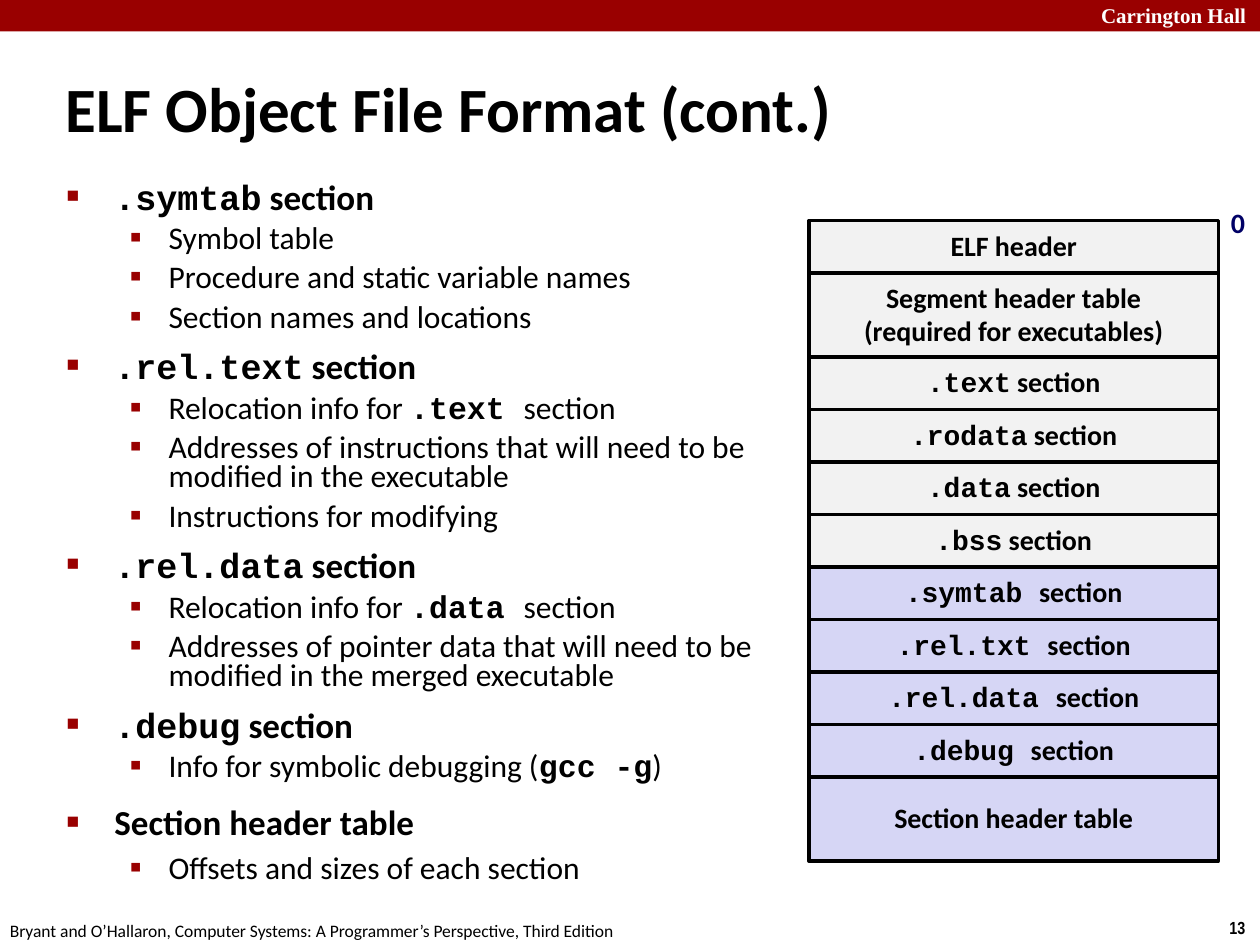
from lxml import etree
from pptx import Presentation
from pptx.dml.color import RGBColor
from pptx.enum.shapes import MSO_SHAPE as Shape
from pptx.enum.text import MSO_ANCHOR as Anchor, MSO_AUTO_SIZE as AutoSize, PP_ALIGN as Align
from pptx.oxml.ns import qn
from pptx.util import Inches, Pt

COLORS = {"red": "990000", "white": "FFFFFF", "black": "000000", "navy": "000066",
          "gray": "F2F2F2", "lavender": "D6D6F5"}
CODE_FONT = "Courier New"


def add_runs(paragraph, text, size, font="Calibri", color="black", bold=False):
    for index, part in enumerate(text.split("`")):
        if not part:
            continue
        is_code = index % 2 == 1
        run = paragraph.add_run()
        run.text = part
        values = {"size": Pt(size), "name": CODE_FONT if is_code else font,
                  "bold": bold or is_code}
        for name, value in values.items():
            setattr(run.font, name, value)
        run.font.color.rgb = RGBColor.from_string(COLORS[color])


def set_bullet(paragraph, character, percent, margin, indent):
    properties = paragraph._p.get_or_add_pPr()
    properties.set("marL", str(Inches(margin)))
    properties.set("indent", str(Inches(indent)))
    bullet_color = etree.SubElement(properties, qn("a:buClr"))
    etree.SubElement(bullet_color, qn("a:srgbClr"), val=COLORS["red"])
    etree.SubElement(properties, qn("a:buSzPct"), val=str(percent * 1000))
    etree.SubElement(properties, qn("a:buFont"), typeface="Arial")
    etree.SubElement(properties, qn("a:buChar"), char=character)


presentation = Presentation()
presentation.slide_width = Inches(10)
presentation.slide_height = Inches(7.5)
slide = presentation.slides.add_slide(presentation.slide_layouts[5])

banner = slide.shapes.add_shape(Shape.RECTANGLE, 0, 0, Inches(10), Inches(0.25))
banner.shadow.inherit = False
banner.fill.solid()
banner.fill.fore_color.rgb = RGBColor.from_string(COLORS["red"])
banner.line.fill.background()

title = slide.shapes.title
title_box = {"left": 0.42, "top": 0.42, "width": 9.53, "height": 0.86}
for name, value in title_box.items():
    setattr(title, name, Inches(value))
title.text_frame.vertical_anchor = Anchor.MIDDLE
title.text_frame.auto_size = AutoSize.NONE
title.text_frame.paragraphs[0].alignment = Align.LEFT
add_runs(title.text_frame.paragraphs[0], "ELF Object File Format (cont.)", 36, bold=True)

labels = [
    ("Carrington Hall", (8.64, -0.03, 1.43, 0.3),
     {"size": 12, "font": "Times New Roman", "color": "white", "bold": True}),
    ("13", (9.66, 7.23, 0.34, 0.27), {"size": 10, "font": "Arial Narrow", "bold": True}),
    ("Bryant and O’Hallaron, Computer Systems: A Programmer’s Perspective, Third Edition",
     (-0.02, 7.25, 5.08, 0.27), {"size": 10}),
    ("0", (9.67, 1.58, 0.31, 0.37), {"size": 16, "color": "navy", "bold": True}),
]
for text, box, style in labels:
    label = slide.shapes.add_textbox(*map(Inches, box))
    label.text_frame.word_wrap = False
    add_runs(label.text_frame.paragraphs[0], text, **style)

outline = [
    ("`.symtab` section", 0.71, 0.78,
     ["Symbol table", "Procedure and static variable names", "Section names and locations"]),
    ("`.rel.text` section", 0.71, 0.78,
     ["Relocation info for `.text `section",
      "Addresses of instructions that will need to be modified in the executable",
      "Instructions for modifying"]),
    ("`.rel.data` section", 0.71, 0.78,
     ["Relocation info for `.data `section",
      "Addresses of pointer data that will need to be modified in the merged executable"]),
    ("`.debug` section", 0.71, 0.78, ["Info for symbolic debugging (`gcc -g`)"]),
    ("Section header table", 0.88, 0.88, ["Offsets and sizes of each section"]),
]
body = slide.shapes.add_textbox(Inches(0.43), Inches(1.43), Inches(5.77), Inches(5.98))
body.text_frame.word_wrap = True
paragraph = body.text_frame.paragraphs[0]
for heading, heading_spacing, item_spacing, items in outline:
    if paragraph.runs:
        paragraph = body.text_frame.add_paragraph()
    paragraph.line_spacing = heading_spacing
    paragraph.space_before = Pt(12.5)
    set_bullet(paragraph, "■", 60, 0.38, -0.38)
    add_runs(paragraph, heading, 20, bold=True)
    for item in items:
        paragraph = body.text_frame.add_paragraph()
        paragraph.level = 1
        paragraph.line_spacing = item_spacing
        paragraph.space_before = Pt(5.6)
        set_bullet(paragraph, "▪", 110, 0.81, -0.31)
        add_runs(paragraph, item, 18)

single, double = Inches(5 / 12), Inches(8 / 12)
sections = [
    (["ELF header"], single, "gray"),
    (["Segment header table", "(required for executables)"], double, "gray"),
    (["`.text` section"], single, "gray"),
    (["`.rodata` section"], single, "gray"),
    (["`.data` section"], single, "gray"),
    (["`.bss` section"], single, "gray"),
    (["`.symtab `section"], single, "lavender"),
    (["`.rel.txt `section"], single, "lavender"),
    (["`.rel.data `section"], single, "lavender"),
    (["`.debug `section"], single, "lavender"),
    (["Section header table"], double, "lavender"),
]
top = Inches(1.75)
for lines, height, color in sections:
    section = slide.shapes.add_shape(Shape.RECTANGLE, Inches(6.42), top, Inches(3.25), height)
    section.shadow.inherit = False
    section.fill.solid()
    section.fill.fore_color.rgb = RGBColor.from_string(COLORS[color])
    section.line.color.rgb = RGBColor.from_string(COLORS["black"])
    section.line.width = Pt(2)
    frame = section.text_frame
    frame.word_wrap = False
    frame.vertical_anchor = Anchor.MIDDLE
    for index, line in enumerate(lines):
        paragraph = frame.add_paragraph() if index else frame.paragraphs[0]
        paragraph.alignment = Align.CENTER
        paragraph.line_spacing = 0.94 if "`" in line else 0.98
        add_runs(paragraph, line, 16, bold=True)
    top += height

presentation.save("out.pptx")
